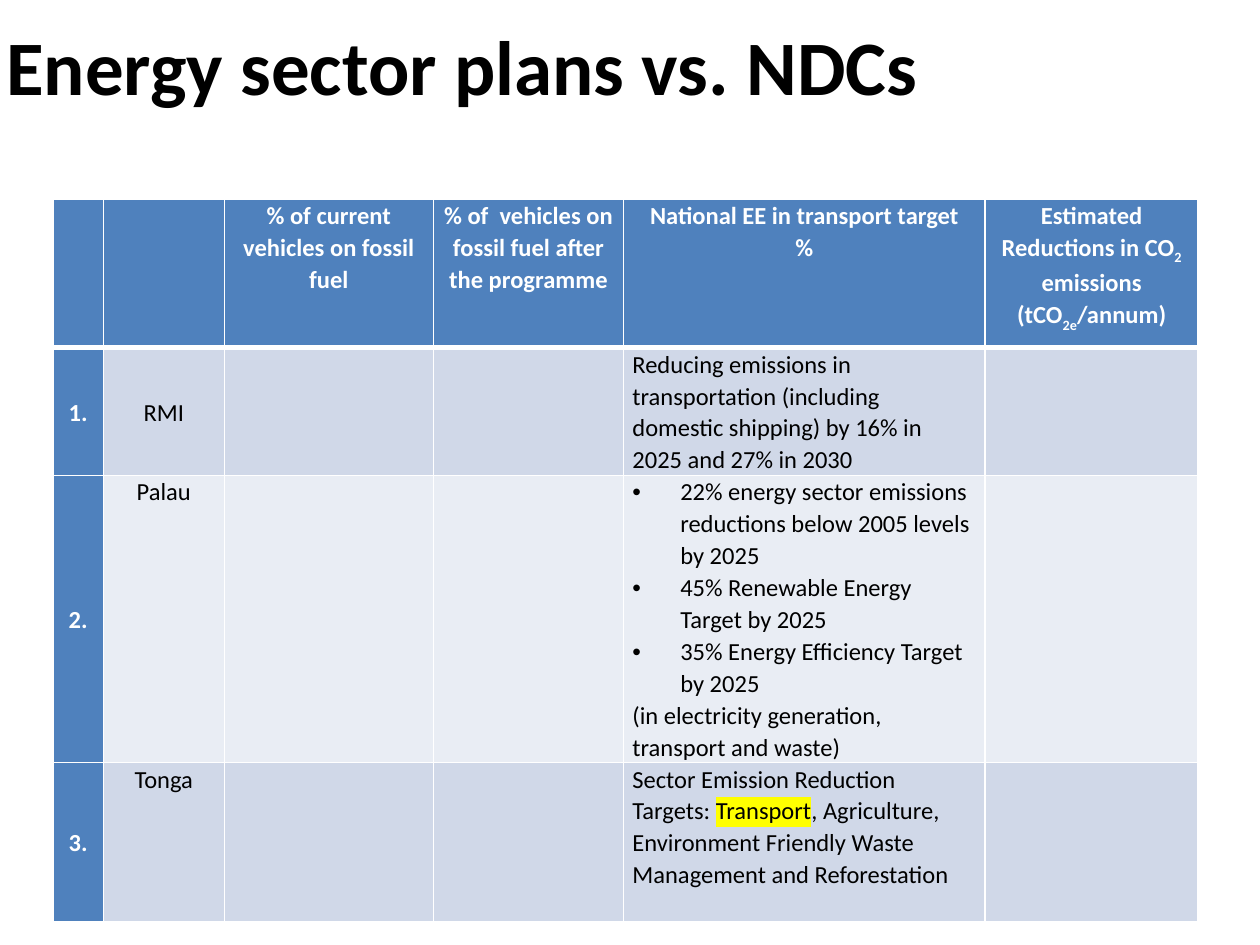
import pptx
from pptx.dml.color import RGBColor
from pptx.enum.text import MSO_ANCHOR, MSO_AUTO_SIZE, PP_ALIGN
from pptx.oxml import parse_xml
from pptx.oxml.ns import nsdecls
from pptx.util import Inches, Pt

THEME = {
    "font": "Calibri", "title_size": 44, "table_size": 14, "spacing": 1.07,
    "black": "000000", "white": "FFFFFF", "blue": "4F81BD",
    "bands": ("D0D8E8", "E9EDF4"), "marker": "FFFF00",
}

TITLE = "Energy sector plans vs. NDCs"
SUB, MARK = "subscript", "marked"

# A cell is a list of paragraphs, a paragraph a list of (text, style) runs or plain text.
HEADERS = [
    [], [],
    ["% of current vehicles on fossil fuel"],
    ["% of  vehicles on fossil fuel after the programme"],
    ["National EE in transport target", "%"],
    [[("Estimated Reductions in CO", None), ("2", SUB), (" emissions (tCO", None),
      ("2e", SUB), ("/annum)", None)]],
]
COUNTRIES = [
    ("RMI", ["Reducing emissions in transportation (including domestic shipping) "
             "by 16% in 2025 and 27% in 2030"]),
    ("Palau", ["• 22% energy sector emissions reductions below 2005 levels by 2025",
               "• 45% Renewable Energy Target by 2025",
               "• 35% Energy Efficiency Target by 2025",
               "(in electricity generation, transport and waste)"]),
    ("Tonga", [[("Sector Emission Reduction Targets: ", None), ("Transport", MARK),
                (", Agriculture, Environment Friendly Waste Management and Reforestation",
                 None)]]),
]
COLUMNS = [0.4, 0.96, 1.66, 1.51, 2.87, 1.69]
ROWS = [1.18, 1.01, 2.28, 1.26]
TABLE_LEFT, TABLE_TOP = 0.42, 1.58
TARGET = 4
BULLET = "• "


def set_font(font, size, color, bold):
    font.name, font.size, font.bold = THEME["font"], Pt(size), bold
    font.color.rgb = RGBColor.from_string(color)


def add_bullet(p):
    pPr = p._p.get_or_add_pPr()
    pPr.set("marL", str(Inches(0.38)))
    pPr.set("indent", str(-Inches(0.38)))
    pPr.append(parse_xml(f'<a:buFont {nsdecls("a")} typeface="Arial"/>'))
    pPr.append(parse_xml(f'<a:buChar {nsdecls("a")} char="•"/>'))


def style_run(r, style, color, bold):
    set_font(r.font, THEME["table_size"], color, bold)
    rPr = r._r.get_or_add_rPr()
    if style == SUB:
        rPr.set("baseline", "-25000")
    elif style == MARK:
        rPr.find(pptx.oxml.ns.qn("a:solidFill")).addnext(parse_xml(
            f'<a:highlight {nsdecls("a")}><a:srgbClr val="{THEME["marker"]}"/></a:highlight>'))


def write(cell, paragraphs, align, color, bold):
    tf = cell.text_frame
    for i, content in enumerate(paragraphs):
        p = tf.add_paragraph() if i else tf.paragraphs[0]
        p.alignment, p.line_spacing = align, THEME["spacing"]
        runs = [(content, None)] if isinstance(content, str) else content
        if runs[0][0].startswith(BULLET):
            add_bullet(p)
            runs = [(runs[0][0].removeprefix(BULLET), None)]
        for text, style in runs:
            r = p.add_run()
            r.text = text
            style_run(r, style, color, bold)


def paint(cell, color, top, bottom):
    """Fill the cell and draw its white borders, top and bottom widths in points."""
    cell.fill.solid()
    cell.fill.fore_color.rgb = RGBColor.from_string(color)
    sides = {"lnL": 1, "lnR": 1, "lnT": top, "lnB": bottom}
    for i, (side, width) in enumerate(sides.items()):
        cell._tc.get_or_add_tcPr().insert(i, parse_xml(
            f'<a:{side} {nsdecls("a")} w="{Pt(width)}"><a:solidFill>'
            f'<a:srgbClr val="{THEME["white"]}"/></a:solidFill></a:{side}>'))


def add_title(s):
    title = s.shapes.title
    title.left, title.top, title.width, title.height = map(Inches, (0, 0.06, 9, 1.25))
    tf = title.text_frame
    tf.text = TITLE
    tf.auto_size = MSO_AUTO_SIZE.NONE
    tf.vertical_anchor = MSO_ANCHOR.TOP
    tf.margin_left, tf.margin_top = Inches(0.05), Inches(0.09)
    p = tf.paragraphs[0]
    p.alignment, p.space_after = PP_ALIGN.LEFT, Pt(6)
    set_font(p.runs[0].font, THEME["title_size"], THEME["black"], True)


def add_targets_table(s):
    table = s.shapes.add_table(
        len(ROWS), len(COLUMNS), Inches(TABLE_LEFT), Inches(TABLE_TOP),
        Inches(sum(COLUMNS)), Inches(sum(ROWS))).table
    table.first_col = True
    for column, width in zip(table.columns, COLUMNS):
        column.width = Inches(width)
    for row, height in zip(table.rows, ROWS):
        row.height = Inches(height)

    body = [[[f"{n}."], [name], [], [], target, []]
            for n, (name, target) in enumerate(COUNTRIES, 1)]
    for i, row in enumerate([HEADERS] + body):
        for j, paragraphs in enumerate(row):
            cell = table.cell(i, j)
            heading = i == 0 or j == 0
            cell.margin_left = cell.margin_right = Inches(0.07)
            cell.margin_top = cell.margin_bottom = 0
            middle = i and (j in (0, TARGET) or i == 1)
            cell.vertical_anchor = MSO_ANCHOR.MIDDLE if middle else MSO_ANCHOR.TOP
            paint(cell, THEME["blue"] if heading else THEME["bands"][(i - 1) % 2],
                  top=3 if i == 1 else 1, bottom=3 if i == 0 else 1)
            write(cell, paragraphs,
                  PP_ALIGN.LEFT if i and j == TARGET else PP_ALIGN.CENTER,
                  THEME["white"] if heading else THEME["black"], heading)
    table.cell(len(ROWS) - 1, TARGET).margin_bottom = Inches(0.25)


def main():
    prs = pptx.Presentation()
    prs.slide_width, prs.slide_height = Inches(10), Inches(7.5)
    s = prs.slides.add_slide(prs.slide_layouts.get_by_name("Title Only"))
    add_title(s)
    add_targets_table(s)
    prs.save("out.pptx")


if __name__ == "__main__":
    main()
